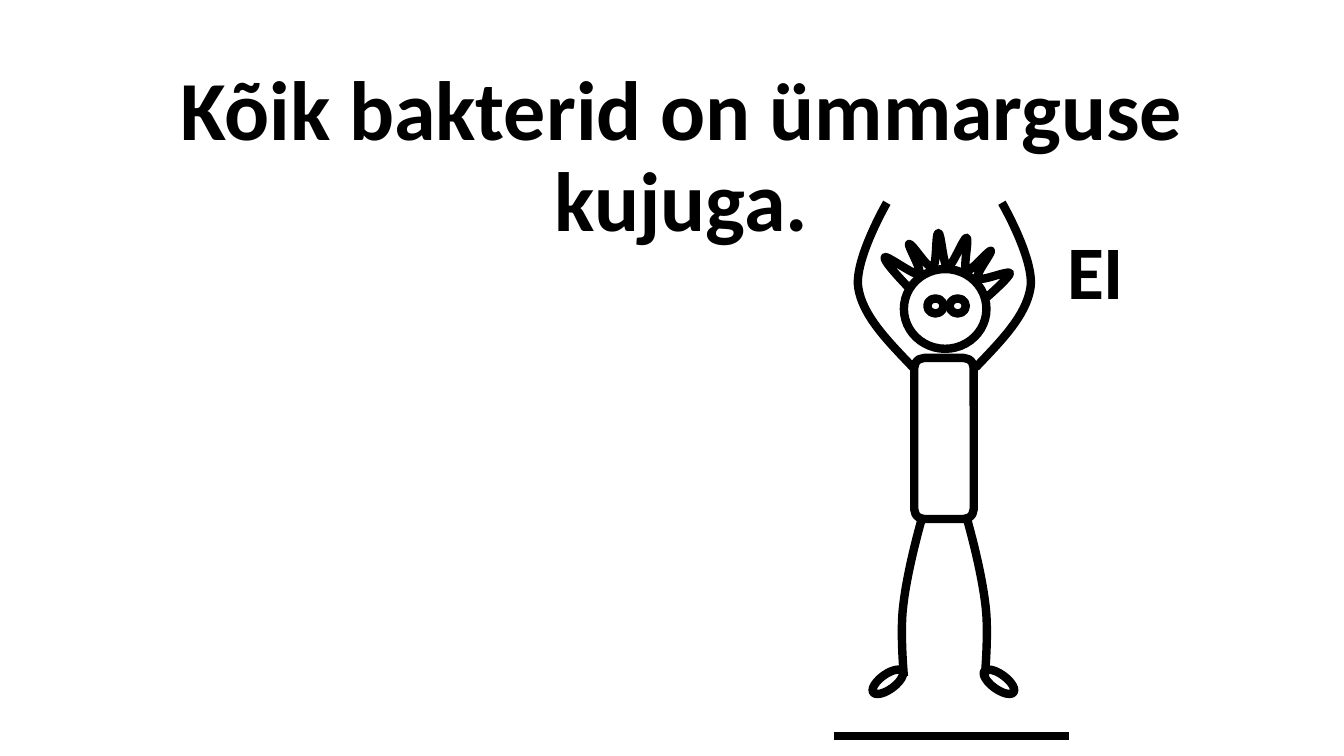
from lxml.etree import SubElement
from pptx import Presentation
from pptx.dml.color import RGBColor
from pptx.enum.shapes import MSO_CONNECTOR, MSO_SHAPE
from pptx.enum.text import MSO_ANCHOR, MSO_AUTO_SIZE, PP_ALIGN
from pptx.oxml.ns import qn
from pptx.util import Cm, Pt

INK = "000000"
FONT = "Calibri"
AXIS = 23.8  # centre line of the figure, in cm

# Each route: a start point, then three points per Bézier curve, in cm
LEG = [(23.22, 13.11),
       (23.01, 13.87), (22.83, 14.66), (22.76, 15.29),
       (22.68, 15.95), (22.78, 17.04), (22.78, 17.04)]
ARM = [(23.01, 9.26),
       (22.38, 8.6), (21.74, 7.96), (21.63, 7.25),
       (21.52, 6.55), (22.35, 5.11), (22.35, 5.11)]
HAIR = [(22.89, 7.24),
        (22.58, 6.91), (22.25, 6.55), (22.3, 6.48),
        (22.35, 6.43), (23.06, 6.96), (23.16, 6.91),
        (23.27, 6.86), (22.86, 6.17), (22.91, 6.15),
        (22.99, 6.12), (23.37, 6.78), (23.5, 6.73),
        (23.62, 6.71), (23.57, 5.87), (23.65, 5.87),
        (23.72, 5.87), (23.77, 6.71), (23.88, 6.73),
        (24, 6.73), (24.28, 5.99), (24.36, 5.99),
        (24.43, 6.02), (24.26, 6.78), (24.36, 6.83),
        (24.43, 6.88), (24.92, 6.3), (24.97, 6.32),
        (25.02, 6.35), (24.56, 6.93), (24.64, 7.01),
        (24.71, 7.11), (25.4, 6.81), (25.45, 6.88),
        (25.48, 6.96), (24.87, 7.49), (24.87, 7.49)]


def color(code):
    return RGBColor.from_string(code)


def ink(line):
    line.color.rgb = color(INK)
    line.width = Pt(6)


def outline(shape):
    shape.shadow.inherit = False
    shape.fill.background()
    ink(shape.line)


def add_part(group, kind, left, top, width, height, turn=0):
    part = group.shapes.add_shape(kind, Cm(left), Cm(top), Cm(width), Cm(height))
    part.rotation = turn
    outline(part)


def add_curve(group, route):
    dots = [(Cm(x), Cm(y)) for x, y in route]
    pen = group.shapes.build_freeform(*dots[0])
    pen.add_line_segments(dots[3::3], close=False)
    shape = pen.convert_to_shape()
    # Bend each straight piece into a cubic curve
    pieces = list(shape._element.iter(qn("a:lnTo")))
    for i, piece in enumerate(pieces):
        bend = piece.makeelement(qn("a:cubicBezTo"))
        for x, y in dots[3 * i + 1:3 * i + 4]:
            SubElement(bend, qn("a:pt"),
                       x=str(x - shape.left), y=str(y - shape.top))
        piece.getparent().replace(piece, bend)
    outline(shape)


def mirror(route):
    return [(2 * AXIS - x, y) for x, y in route]


def add_line(group, left, right, y):
    line = group.shapes.add_connector(
        MSO_CONNECTOR.STRAIGHT, Cm(left), Cm(y), Cm(right), Cm(y))
    ink(line.line)
    SubElement(line._element.spPr, qn("a:effectLst"))


def set_text(shape, text, size, space):
    frame = shape.text_frame
    frame.text = text
    frame.word_wrap = True
    frame.auto_size = MSO_AUTO_SIZE.NONE
    frame.vertical_anchor = MSO_ANCHOR.MIDDLE
    frame.margin_left = frame.margin_right = Cm(0.33)
    frame.margin_top = frame.margin_bottom = Cm(0.18)
    para = frame.paragraphs[0]
    para.alignment = PP_ALIGN.CENTER
    para.line_spacing = space
    font = para.runs[0].font
    font.name, font.size, font.bold = FONT, Pt(size), True
    font.color.rgb = color(INK)


def add_figure(slide):
    group = slide.shapes.add_group_shape()
    # Body and head
    add_part(group, MSO_SHAPE.ROUNDED_RECTANGLE, 23.04, 9.02, 1.5, 4.06)
    add_part(group, MSO_SHAPE.OVAL, 22.78, 6.78, 2.08, 2.01)
    # Legs, arms and hair
    for limb in (LEG, ARM):
        add_curve(group, limb)
        add_curve(group, mirror(limb))
    add_curve(group, HAIR)
    # Feet and eyes
    for left, turn in ((21.92, -36), (24.72, 36)):
        add_part(group, MSO_SHAPE.OVAL, left, 16.99, 0.91, 0.38, turn)
    for left in (23.37, 23.93):
        add_part(group, MSO_SHAPE.OVAL, left, 7.52, 0.41, 0.38)
    # Ground
    add_line(group, 21.01, 26.95, 18.54)


def main():
    deck = Presentation()
    deck.slide_width, deck.slide_height = Cm(33.87), Cm(19.05)
    slide = deck.slides.add_slide(deck.slide_layouts[5])

    # Statement
    title = slide.shapes.title
    title.left, title.top = Cm(0.79), Cm(0.99)
    title.width, title.height = Cm(32.77), Cm(6.02)
    set_text(title, "Kõik bakterid on ümmarguse kujuga.", 60, 0.9)

    # Answer
    answer = slide.shapes.add_textbox(Cm(22.25), Cm(5.13), Cm(10.72), Cm(3.33))
    set_text(answer, "EI", 54, 1.0)

    add_figure(slide)
    deck.save("out.pptx")


if __name__ == "__main__":
    main()
